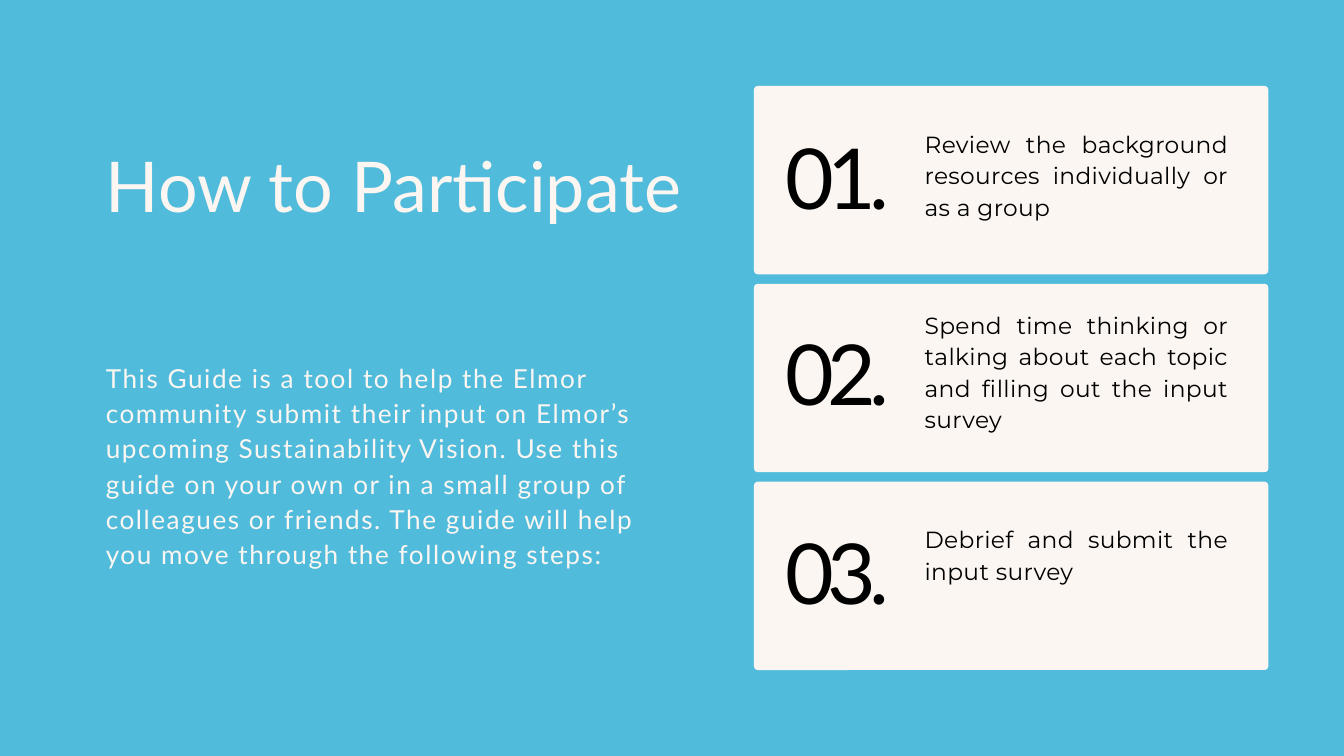
from pptx import Presentation
from pptx.dml.color import RGBColor
from pptx.enum.shapes import MSO_SHAPE
from pptx.enum.text import MSO_ANCHOR, PP_ALIGN
from pptx.util import Cm, Pt

BLUE, CREAM, BLACK = "51BBDB", "FBF6F1", "000000"


def color(hex_code):
    return RGBColor.from_string(hex_code)


def write(box, text, font, size, ink, line, tracking=0, align=PP_ALIGN.LEFT):
    frame = box.text_frame
    frame.word_wrap = True
    frame.vertical_anchor = MSO_ANCHOR.TOP
    frame.margin_left = frame.margin_right = 0
    frame.margin_top = frame.margin_bottom = 0
    para = frame.paragraphs[0]
    para.alignment = align
    para.line_spacing = Pt(line)
    para.font.name = font
    para.font.size = Pt(size)
    para.font.color.rgb = color(ink)
    span = para.add_run()
    span.text = text
    if tracking:
        # Letter spacing in hundredths of a point
        span._r.get_or_add_rPr().set("spc", str(round(tracking * 100)))


deck = Presentation()
deck.slide_width, deck.slide_height = Cm(50.8), Cm(28.58)
page = deck.slides.add_slide(deck.slide_layouts[5])
page.background.fill.solid()
page.background.fill.fore_color.rgb = color(BLUE)

# Title
title = page.shapes.title
title.left, title.top, title.width, title.height = Cm(4), Cm(5.5), Cm(22.73), Cm(6.1)
write(title, "How to Participate", "Lato", 75, CREAM, 87)

# Introduction
intro = page.shapes.add_textbox(Cm(4), Cm(13.55), Cm(21.4), Cm(9.25))
write(intro,
      "This Guide is a tool to help the Elmor community submit their input on "
      "Elmor’s upcoming Sustainability Vision. Use this guide on your own or in "
      "a small group of colleagues or friends. The guide will help you move "
      "through the following steps:",
      "Lato", 28, CREAM, 37.8, 1.7)

# Step cards: number top, text top, text height, wording
steps = [
    (5.49, 4.78, 3.43, "Review the background resources individually or as a group"),
    (12.9, 11.63, 4.6, "Spend time thinking or talking about each topic and filling "
                       "out the input survey"),
    (20.45, 19.74, 2.29, "Debrief and submit the input survey"),
]
for index, (number_top, text_top, text_height, wording) in enumerate(steps):
    card = page.shapes.add_shape(MSO_SHAPE.ROUNDED_RECTANGLE, Cm(28.5),
                                 Cm(3.25 + 7.48 * index), Cm(19.44), Cm(7.12))
    card.adjustments[0] = 0.02
    card.shadow.inherit = False
    card.fill.solid()
    card.fill.fore_color.rgb = color(CREAM)
    card.line.fill.background()

    number = page.shapes.add_textbox(Cm(29.69), Cm(number_top), Cm(4.4), Cm(3.22))
    write(number, f"{index + 1:02}.", "Lato", 90, BLACK, 86.4, -7.4)

    step = page.shapes.add_textbox(Cm(34.95), Cm(text_top), Cm(11.48), Cm(text_height))
    write(step, wording, "Montserrat", 25, BLACK, 33.7, 0.4, PP_ALIGN.JUSTIFY)

deck.save("out.pptx")
